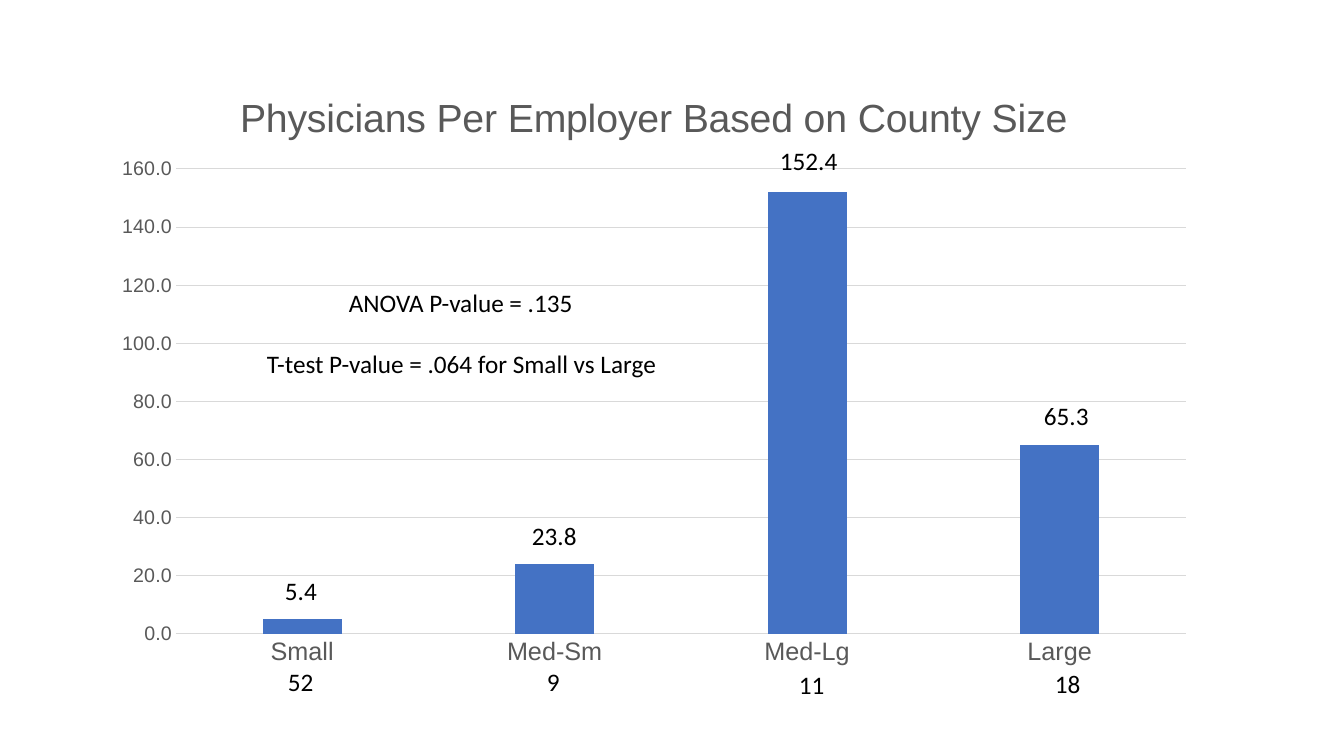
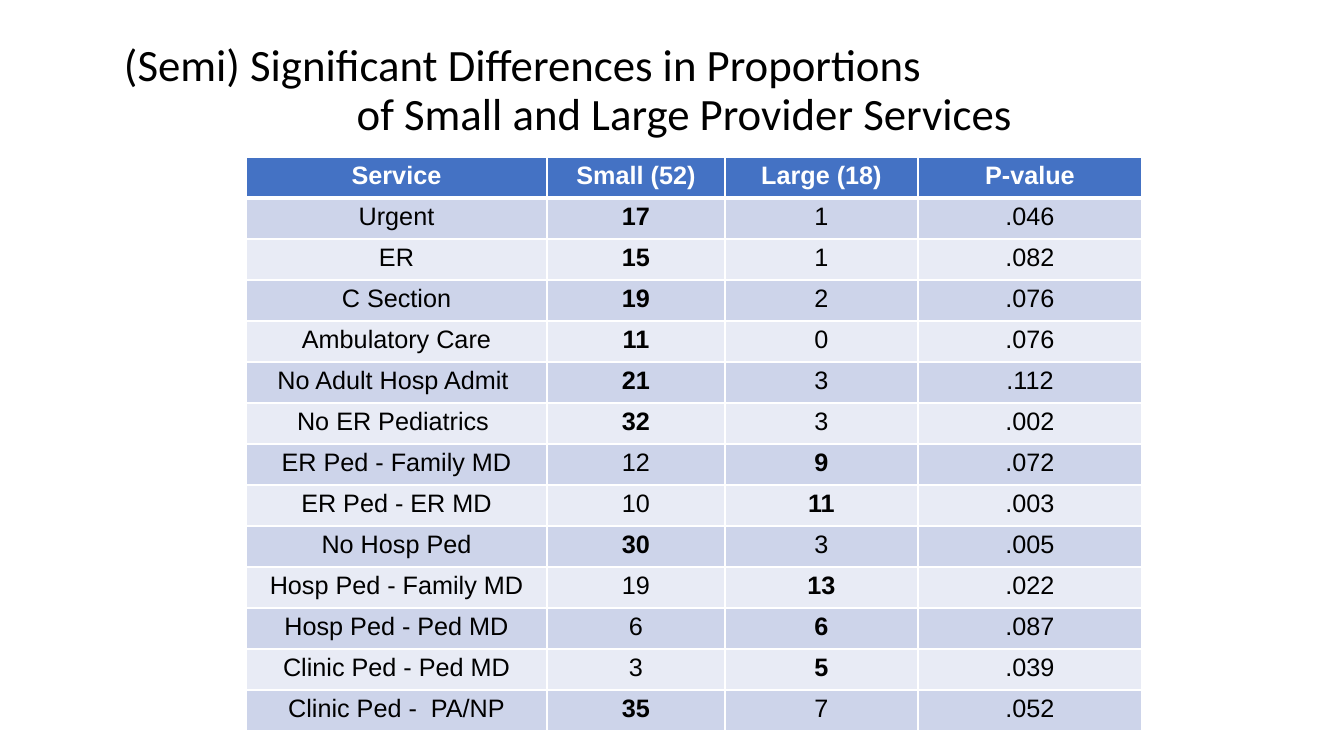
"""Build two slides: a chart of physicians per employer and a table of provider services."""
import lxml.etree
import pptx
import pptx.chart.data
import pptx.dml.color
import pptx.enum.chart
import pptx.enum.text
import pptx.oxml
import pptx.oxml.ns
import pptx.util

RGBColor = pptx.dml.color.RGBColor
BLACK = RGBColor(0x00, 0x00, 0x00)
WHITE = RGBColor(0xFF, 0xFF, 0xFF)
GRAY = RGBColor(0x59, 0x59, 0x59)
GRID = RGBColor(0xD9, 0xD9, 0xD9)
BLUE = RGBColor(0x44, 0x72, 0xC4)
BANDS = (RGBColor(0xCD, 0xD4, 0xEA), RGBColor(0xE8, 0xEB, 0xF5))
HEADING_FONT = "Calibri"
DATA_FONT = "Arial"
ALIGN = pptx.enum.text.PP_ALIGN
PX_PER_INCH = 100.8
SLIDE_SIZE = (1344, 756)

CHART_TITLE = "Physicians Per Employer Based on County Size"
PHYSICIANS = {"Small": 5, "Med-Sm": 24, "Med-Lg": 152, "Large": 65}
CHART_BOX = (100, 76, 1109, 602)
PLOT_BOX = (176, 169, 1010, 465)
CHART_TITLE_CORNER = (233, 86)
CHART_NOTES = [
    ("5.4", 275, 570, 52),
    ("23.8", 522, 515, 66),
    ("152.4", 770, 140, 79),
    ("65.3", 1034, 395, 66),
    ("52", 278, 661, 46),
    ("9", 537, 661, 33),
    ("11", 789, 664, 46),
    ("18", 1045, 663, 46),
    ("ANOVA P-value = .135", 339, 282, 246),
    ("T-test P-value = .064 for Small vs Large", 257, 343, 414),
]
NOTE_HEIGHT = 40

TITLE_LINES = [
    ("(Semi) Significant Differences in Proportions", ALIGN.LEFT),
    ("of Small and Large Provider Services", ALIGN.CENTER),
]
TITLE_BOX = (114, 41, 1141, 101)
SMALL_COUNT, LARGE_COUNT = 52, 18
HEADER = ("Service", f"Small ({SMALL_COUNT})", f"Large ({LARGE_COUNT})", "P-value")
SERVICES = [
    ("Urgent", 17, 1, ".046"),
    ("ER", 15, 1, ".082"),
    ("C Section", 19, 2, ".076"),
    ("Ambulatory Care", 11, 0, ".076"),
    ("No Adult Hosp Admit ", 21, 3, ".112"),
    ("No ER Pediatrics ", 32, 3, ".002"),
    ("ER Ped - Family MD", 12, 9, ".072"),
    ("ER Ped - ER MD", 10, 11, ".003"),
    ("No Hosp Ped", 30, 3, ".005"),
    ("Hosp Ped - Family MD", 19, 13, ".022"),
    ("Hosp Ped - Ped MD", 6, 6, ".087"),
    ("Clinic Ped - Ped MD", 3, 5, ".039"),
    ("Clinic Ped -  PA/NP", 35, 7, ".052"),
]
TABLE_CORNER = (246, 157)
COLUMN_WIDTHS = (301, 178, 193, 224)
ROW_HEIGHT = 41


def px(length):
    return pptx.util.Emu(round(length * 914400 / PX_PER_INCH))


def style_font(font, size, color, name=DATA_FONT, bold=False):
    font.size = pptx.util.Pt(size)
    font.name = name
    font.bold = bold
    font.color.rgb = color


def write_text(paragraph, text, size=18, color=BLACK, name=HEADING_FONT,
               bold=False, align=None, spacing=None):
    run = paragraph.add_run()
    run.text = text
    style_font(run.font, size, color, name, bold)
    if align is not None:
        paragraph.alignment = align
    if spacing is not None:
        paragraph.line_spacing = spacing


def add_text_frame(slide, box, wrap):
    frame = slide.shapes.add_textbox(*map(px, box)).text_frame
    frame.word_wrap = wrap
    return frame


def place_in_chart(parent, index, corner, size=None):
    left, top, width, height = CHART_BOX
    values = [("x", (corner[0] - left) / width), ("y", (corner[1] - top) / height)]
    if size:
        values += [("w", size[0] / width), ("h", size[1] / height)]
    qn = pptx.oxml.ns.qn
    for old_layout in parent.findall(qn("c:layout")):
        parent.remove(old_layout)
    layout = parent.makeelement(qn("c:layout"))
    manual = lxml.etree.SubElement(layout, qn("c:manualLayout"))
    if size:
        lxml.etree.SubElement(manual, qn("c:layoutTarget"), val="inner")
    for key in ("x", "y"):
        lxml.etree.SubElement(manual, qn(f"c:{key}Mode"), val="edge")
    for key, value in values:
        lxml.etree.SubElement(manual, qn(f"c:{key}"), val=f"{value:.4f}")
    parent.insert(index, layout)


def style_line(line):
    line.color.rgb = GRID
    line.width = pptx.util.Pt(0.75)


def add_physician_chart(slide):
    data = pptx.chart.data.CategoryChartData()
    data.categories = list(PHYSICIANS)
    data.add_series("Series 1", list(PHYSICIANS.values()))
    kind = pptx.enum.chart.XL_CHART_TYPE.COLUMN_CLUSTERED
    chart = slide.shapes.add_chart(kind, *map(px, CHART_BOX), data).chart
    chart.has_legend = False
    style_font(chart.font, 10, BLACK)
    write_text(chart.chart_title.text_frame.paragraphs[0], CHART_TITLE,
               size=28, color=GRAY, name=DATA_FONT)
    chart.chart_title.include_in_layout = False
    place_in_chart(chart.chart_title._element, 1, CHART_TITLE_CORNER)
    place_in_chart(chart._chartSpace.chart.plotArea, 0, PLOT_BOX[:2], PLOT_BOX[2:])

    plot = chart.plots[0]
    plot.gap_width, plot.overlap, plot.vary_by_categories = 219, -27, False
    fill = plot.series[0].format.fill
    fill.solid()
    fill.fore_color.rgb = BLUE

    for axis, size in ((chart.category_axis, 18), (chart.value_axis, 14)):
        axis.major_tick_mark = pptx.enum.chart.XL_TICK_MARK.NONE
        axis.minor_tick_mark = pptx.enum.chart.XL_TICK_MARK.NONE
        style_font(axis.tick_labels.font, size, GRAY)
    style_line(chart.category_axis.format.line)
    value_axis = chart.value_axis
    value_axis.minimum_scale, value_axis.maximum_scale, value_axis.major_unit = 0, 160, 20
    value_axis.tick_labels.number_format = "0.0"
    value_axis.tick_labels.number_format_is_linked = False
    value_axis.format.line.fill.background()
    style_line(value_axis.major_gridlines.format.line)


def set_borders(cell, top, bottom):
    properties = cell._tc.get_or_add_tcPr()
    for side, points in (("L", 1), ("R", 1), ("T", top), ("B", bottom)):
        properties.append(pptx.oxml.parse_xml(
            f'<a:ln{side} {pptx.oxml.ns.nsdecls("a")} w="{pptx.util.Pt(points)}">'
            f'<a:solidFill><a:srgbClr val="{WHITE}"/></a:solidFill></a:ln{side}>'))


def add_service_table(slide):
    rows = [HEADER, *SERVICES]
    size = (sum(COLUMN_WIDTHS), ROW_HEIGHT * len(rows))
    table = slide.shapes.add_table(len(rows), len(HEADER),
                                   *map(px, TABLE_CORNER + size)).table
    for column, width in zip(table.columns, COLUMN_WIDTHS):
        column.width = px(width)
    for row_index, values in enumerate(rows):
        table.rows[row_index].height = px(ROW_HEIGHT)
        is_header = row_index == 0
        if not is_header:
            small_leads = values[1] / SMALL_COUNT > values[2] / LARGE_COUNT
            bold_column = 1 if small_leads else 2
        for column_index, value in enumerate(values):
            cell = table.cell(row_index, column_index)
            set_borders(cell, top=3 if row_index == 1 else 1, bottom=3 if is_header else 1)
            cell.fill.solid()
            cell.fill.fore_color.rgb = BLUE if is_header else BANDS[(row_index - 1) % 2]
            write_text(cell.text_frame.paragraphs[0], str(value), name=DATA_FONT,
                       color=WHITE if is_header else BLACK,
                       bold=is_header or column_index == bold_column, align=ALIGN.CENTER)


def add_chart_slide(presentation):
    slide = presentation.slides.add_slide(presentation.slide_layouts[6])
    add_physician_chart(slide)
    for text, left, top, width in CHART_NOTES:
        frame = add_text_frame(slide, (left, top, width, NOTE_HEIGHT), wrap=False)
        write_text(frame.paragraphs[0], text)


def add_table_slide(presentation):
    slide = presentation.slides.add_slide(presentation.slide_layouts[6])
    frame = add_text_frame(slide, TITLE_BOX, wrap=True)
    frame.vertical_anchor = pptx.enum.text.MSO_ANCHOR.MIDDLE
    for index, (text, align) in enumerate(TITLE_LINES):
        paragraph = frame.add_paragraph() if index else frame.paragraphs[0]
        write_text(paragraph, text, size=32, align=align, spacing=0.9)
    add_service_table(slide)


def main():
    presentation = pptx.Presentation()
    presentation.slide_width, presentation.slide_height = map(px, SLIDE_SIZE)
    add_chart_slide(presentation)
    add_table_slide(presentation)
    presentation.save("out.pptx")


if __name__ == "__main__":
    main()
